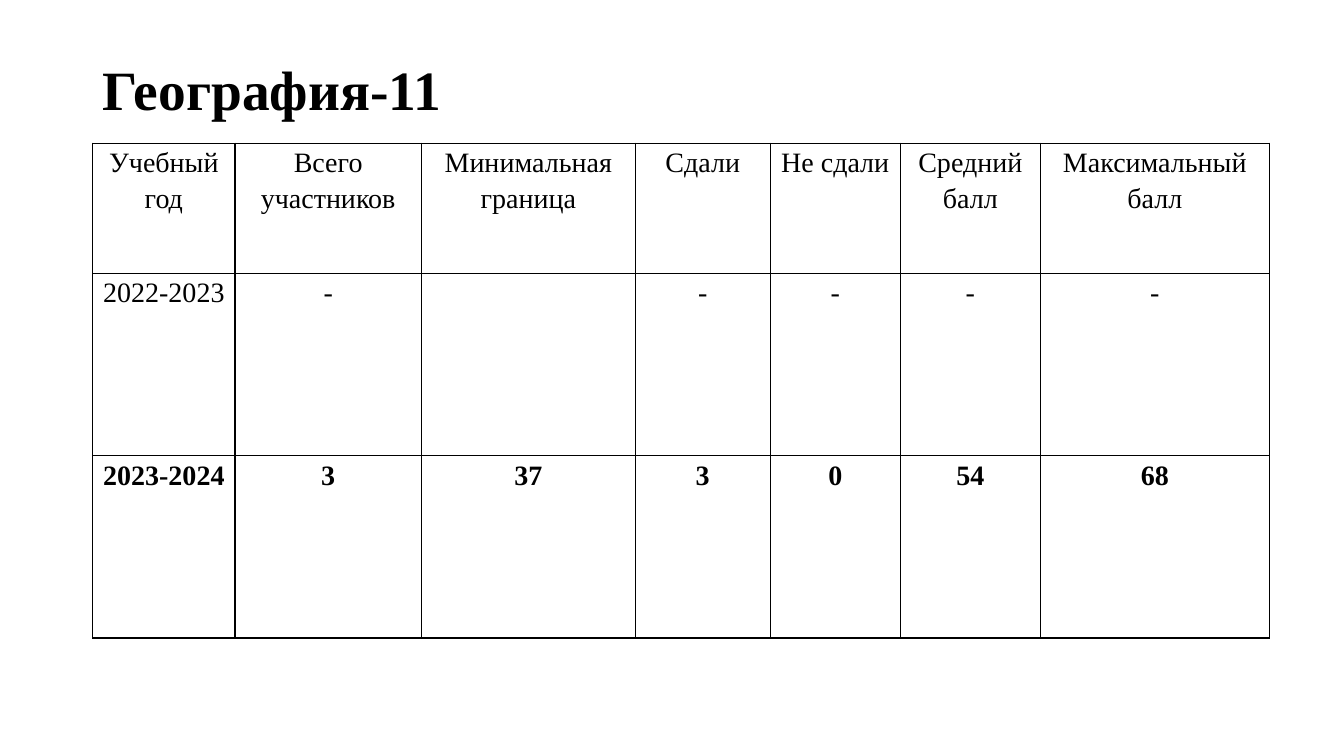
from pptx import Presentation, util as u
from pptx.dml.color import RGBColor
from pptx.enum import text
from pptx.oxml import parse_xml
from pptx.oxml.ns import nsdecls

BLACK = RGBColor(0, 0, 0)
FONT = "Times New Roman"
COLUMNS = [1.41, 1.85, 2.12, 1.34, 1.29, 1.39, 2.27]
ROWS = [1.29, 1.81, 1.81]
RESULTS = [
    ["Учебный год", "Всего участников", "Минимальная граница", "Сдали",
     "Не сдали", "Средний балл", "Максимальный балл"],
    ["2022-2023", "-", "", "-", "-", "-", "-"],
    ["2023-2024", "3", "37", "3", "0", "54", "68"],
]


def write(frame, words, size=20, bold=False, align=text.PP_ALIGN.CENTER):
    para = frame.paragraphs[0]
    para.alignment = align
    para.line_spacing = 1.15
    span = para.add_run()
    span.text = words
    span.font.name = FONT
    span.font.size = u.Pt(size)
    span.font.bold = bold
    span.font.color.rgb = BLACK


deck = Presentation()
deck.slide_width, deck.slide_height = u.Inches(13.33), u.Inches(7.5)
page = deck.slides.add_slide(deck.slide_layouts[5])

title = page.shapes.title
title.left, title.top = u.Inches(0.92), u.Inches(0.4)
title.width, title.height = u.Inches(11.5), u.Inches(1.45)
title.text_frame.vertical_anchor = text.MSO_ANCHOR.TOP
title.text_frame.auto_size = text.MSO_AUTO_SIZE.NONE
write(title.text_frame, "География-11", size=39.6, bold=True,
      align=text.PP_ALIGN.LEFT)

table = page.shapes.add_table(
    len(ROWS), len(COLUMNS), u.Inches(0.92), u.Inches(1.42),
    u.Inches(sum(COLUMNS)), u.Inches(sum(ROWS))).table
table.first_row = table.horz_banding = False
for column, width in zip(table.columns, COLUMNS):
    column.width = u.Inches(width)
for row, height in zip(table.rows, ROWS):
    row.height = u.Inches(height)

for r, results in enumerate(RESULTS):
    for c, words in enumerate(results):
        cell = table.cell(r, c)
        cell.margin_left = cell.margin_right = u.Inches(0.07)
        cell.margin_top = cell.margin_bottom = 0
        cell.fill.background()
        for place, side in enumerate(["lnL", "lnR", "lnT", "lnB"]):
            border = parse_xml(
                f'<a:{side} {nsdecls("a")} w="{u.Pt(1)}"><a:solidFill>'
                f'<a:srgbClr val="{BLACK}"/></a:solidFill></a:{side}>')
            cell._tc.get_or_add_tcPr().insert(place, border)
        if words:
            write(cell.text_frame, words, bold=r == 2)

deck.save("out.pptx")
